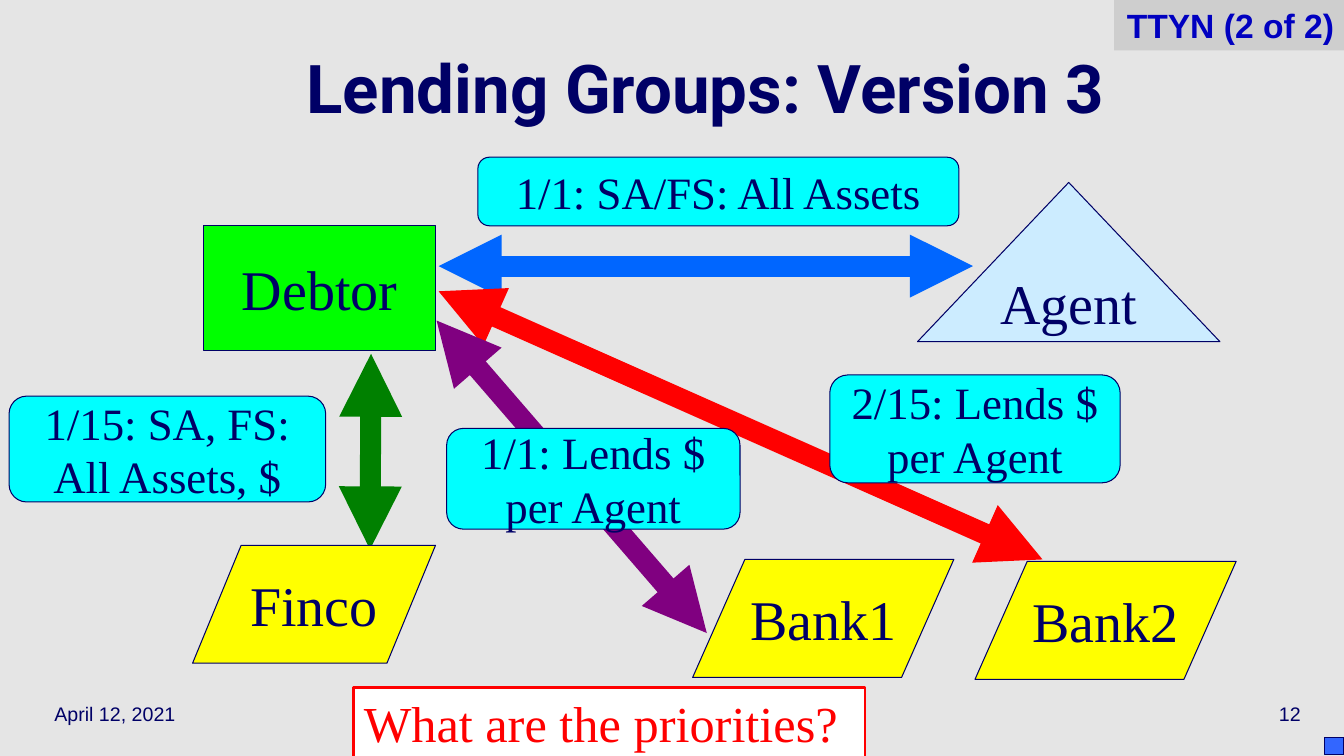
from dataclasses import dataclass
from typing import NamedTuple

from lxml import etree
from pptx import Presentation
from pptx import util as u
from pptx.dml.color import RGBColor
from pptx.enum import shapes, text
from pptx.oxml.ns import qn

PX = 9144  # EMU per px, 100 px to the inch
KIND = shapes.MSO_SHAPE
ALIGN = text.PP_ALIGN
ANCHOR = text.MSO_ANCHOR


@dataclass(frozen=True)
class Theme:
    backdrop: str = "E5E5E5"
    navy: str = "000066"
    tag_fill: str = "CECECE"
    tag_text: str = "0000C0"
    debtor: str = "00FF00"
    lender: str = "FFFF00"
    agent: str = "CCECFF"
    note: str = "00FFFF"
    white: str = "FFFFFF"
    red: str = "FF0000"
    blue: str = "0066FF"
    purple: str = "800080"
    green: str = "008000"
    marker: str = "3366FF"
    serif: str = "Times New Roman"
    sans: str = "Arial"
    heading: str = "Roboto"
    title_size: int = 48
    party_size: int = 40
    question_size: int = 36
    note_size: int = 32
    tag_size: int = 24
    footer_size: int = 14
    outline: float = 0.75
    frame: float = 2
    arrow: float = 15


THEME = Theme()


class Box(NamedTuple):
    left: int
    top: int
    width: int
    height: int


class Arrow(NamedTuple):
    start: tuple[int, int]
    end: tuple[int, int]
    color: str


@dataclass(frozen=True)
class Style:
    size: int
    color: str = THEME.navy
    font: str = THEME.serif
    bold: bool = False
    align: ALIGN = ALIGN.CENTER
    anchor: ANCHOR = ANCHOR.MIDDLE
    spacing: float = 1.0


@dataclass(frozen=True)
class Node:
    box: Box
    kind: KIND
    fill: str
    words: str = ""
    style: Style = Style(THEME.party_size)
    line: str | None = THEME.navy
    weight: float = THEME.outline
    wrap: bool = True


def rgb(color: str) -> RGBColor:
    return RGBColor.from_string(color)


def scaled(lengths: tuple[int, ...]) -> list[int]:
    return [length * PX for length in lengths]


def write(shape, words: str, style: Style, wrap: bool = True) -> None:
    frame = shape.text_frame
    frame.word_wrap = wrap
    frame.vertical_anchor = style.anchor
    para = frame.paragraphs[0]
    para.text = words
    para.alignment = style.align
    para.line_spacing = style.spacing
    para.font.name = style.font
    para.font.size = u.Pt(style.size)
    para.font.bold = style.bold
    para.font.color.rgb = rgb(style.color)


def draw_text(page, box: Box, words: str, style: Style) -> None:
    write(page.shapes.add_textbox(*scaled(box)), words, style)


def draw_node(page, node: Node) -> None:
    shape = page.shapes.add_shape(node.kind, *scaled(node.box))
    shape.shadow.inherit = False
    shape.fill.solid()
    shape.fill.fore_color.rgb = rgb(node.fill)
    if node.line:
        shape.line.color.rgb = rgb(node.line)
        shape.line.width = u.Pt(node.weight)
    else:
        shape.line.fill.background()
    if node.words:
        write(shape, node.words, node.style, node.wrap)


def draw_arrow(page, arrow: Arrow) -> None:
    connector = page.shapes.add_connector(
        shapes.MSO_CONNECTOR.STRAIGHT, *scaled(arrow.start + arrow.end))
    connector.line.color.rgb = rgb(arrow.color)
    connector.line.width = u.Pt(THEME.arrow)
    properties = connector.line._get_or_add_ln()
    for end in ("a:headEnd", "a:tailEnd"):
        etree.SubElement(properties, qn(end), type="triangle")
    etree.SubElement(connector._element.spPr, qn("a:effectLst"))


def lender(box: Box, name: str) -> Node:
    return Node(box, KIND.FLOWCHART_DATA, THEME.lender, name, wrap=False)


def note(box: Box, words: str) -> Node:
    return Node(box, KIND.FLOWCHART_ALTERNATE_PROCESS, THEME.note, words,
                Style(THEME.note_size))


ARROWS = [
    Arrow((435, 264), (965, 264), THEME.blue),
    Arrow((1034, 555), (435, 289), THEME.red),
    Arrow((433, 318), (701, 628), THEME.purple),
    Arrow((368, 351), (367, 545), THEME.green),
]

NODES = [
    # Parties
    Node(Box(202, 224, 230, 124), KIND.FLOWCHART_PROCESS, THEME.debtor, "Debtor"),
    Node(Box(910, 181, 300, 158), KIND.FLOWCHART_EXTRACT, THEME.agent, "Agent",
         wrap=False),
    lender(Box(191, 541, 241, 117), "Finco"),
    lender(Box(687, 555, 259, 117), "Bank1"),
    lender(Box(967, 557, 259, 117), "Bank2"),
    # Dated transactions
    note(Box(474, 156, 477, 68), "1/1: SA/FS: All Assets"),
    note(Box(823, 372, 288, 107), "2/15: Lends $ per Agent"),
    note(Box(443, 425, 291, 100), "1/1: Lends $ per Agent"),
    note(Box(9, 393, 314, 105), "1/15: SA, FS: All Assets, $"),
    # Question, corner marker and tag
    Node(Box(351, 682, 507, 71), KIND.RECTANGLE, THEME.white,
         "What are the priorities?",
         Style(THEME.question_size, THEME.red, align=ALIGN.LEFT, anchor=ANCHOR.TOP),
         THEME.red, THEME.frame),
    Node(Box(1314, 732, 19, 17), KIND.RECTANGLE, THEME.marker),
    Node(Box(1105, 0, 228, 50), KIND.RECTANGLE, THEME.tag_fill, "TTYN (2 of 2)",
         Style(THEME.tag_size, THEME.tag_text, THEME.sans, True, ALIGN.RIGHT,
               ANCHOR.TOP), None),
]


def main() -> None:
    deck = Presentation()
    deck.slide_width, deck.slide_height = scaled((1333, 750))
    page = deck.slides.add_slide(deck.slide_layouts[6])
    page.background.fill.solid()
    page.background.fill.fore_color.rgb = rgb(THEME.backdrop)

    # Title and footer
    draw_text(page, Box(89, 33, 1222, 125), "Lending Groups: Version 3",
              Style(THEME.title_size, font=THEME.heading, bold=True, spacing=0.7))
    for left, words, align in ((44, "April 12, 2021", ALIGN.LEFT),
                               (1022, "12", ALIGN.RIGHT)):
        draw_text(page, Box(left, 683, 278, 50), words,
                  Style(THEME.footer_size, font=THEME.sans, align=align))

    # Arrows lie beneath the parties and notes
    for arrow in ARROWS:
        draw_arrow(page, arrow)
    for node in NODES:
        draw_node(page, node)

    deck.save("out.pptx")


if __name__ == "__main__":
    main()
